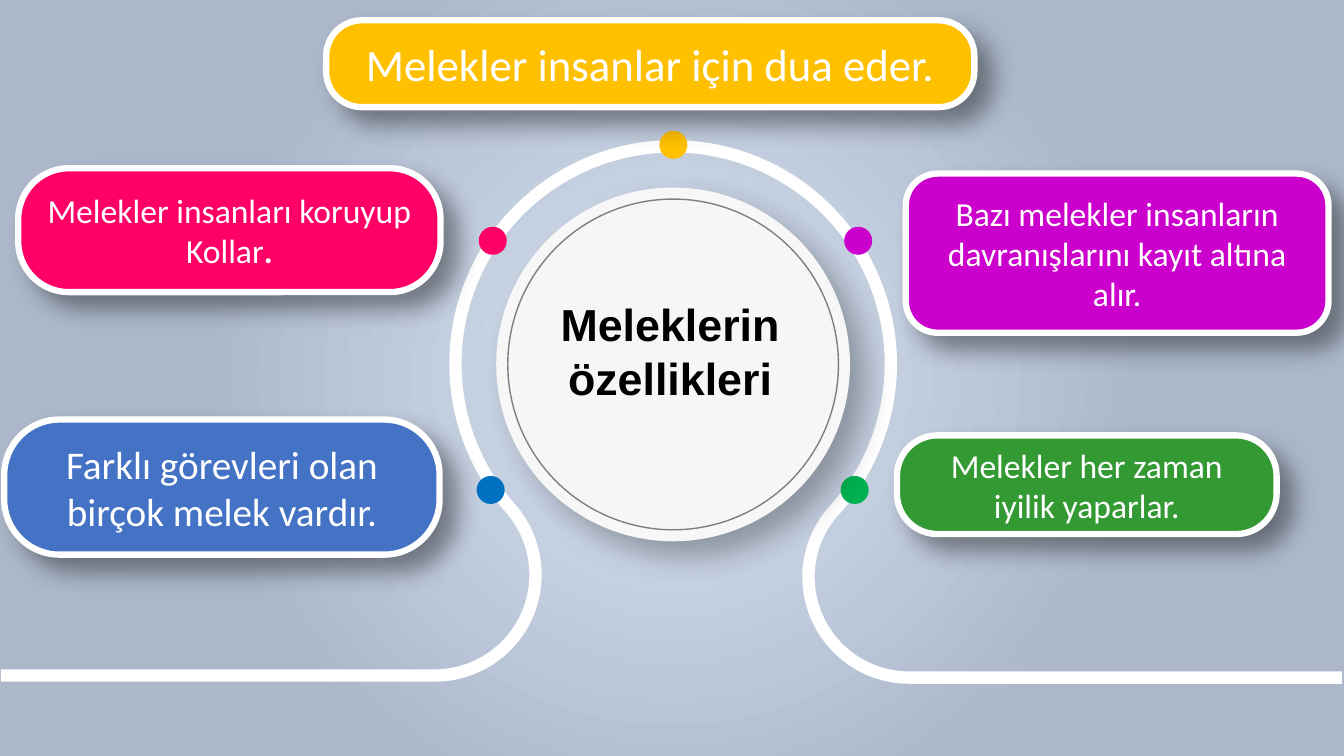
from math import atan2, cos, degrees, radians, sin, tan

from lxml import etree
from pptx import Presentation
from pptx.dml.color import RGBColor
from pptx.enum.shapes import MSO_SHAPE
from pptx.enum.text import MSO_ANCHOR, PP_ALIGN
from pptx.oxml import parse_xml
from pptx.oxml.ns import qn
from pptx.util import Pt

WHITE = "FFFFFF"
NS = "http://schemas.openxmlformats.org/drawingml/2006/main"


def paint(shape, fill, line=None, width=0, shadow=None):
    """Set fill, outline and shadow (opacity %, blur pt, distance pt)."""
    shape.fill.solid()
    shape.fill.fore_color.rgb = RGBColor.from_string(fill)
    if line:
        shape.line.color.rgb = RGBColor.from_string(line)
        shape.line.width = Pt(width)
    else:
        shape.line.fill.background()
    shape.shadow.inherit = False
    if shadow:
        opacity, blur, distance = shadow
        effects = shape._element.spPr.find(qn("a:effectLst"))
        outer = etree.SubElement(effects, qn("a:outerShdw"), blurRad=str(Pt(blur)),
                                 dist=str(Pt(distance)), dir="2700000",
                                 algn="tl", rotWithShape="0")
        color = etree.SubElement(outer, qn("a:srgbClr"), val="000000")
        etree.SubElement(color, qn("a:alpha"), val=str(opacity * 1000))


def arc_curves(center, radius, start, end, count):
    """Return three Bezier points for each of count equal parts of an arc."""
    step = radians(end - start) / count
    pull = 4 / 3 * tan(step / 4)
    points = []
    for i in range(count):
        a = radians(start) + i * step
        b = a + step
        for x, y in ((cos(a) - pull * sin(a), sin(a) + pull * cos(a)),
                     (cos(b) + pull * sin(b), sin(b) - pull * cos(b)),
                     (cos(b), sin(b))):
            points.append((center[0] + radius * x, center[1] + radius * y))
    return points


deck = Presentation()
deck.slide_width, deck.slide_height = Pt(960), Pt(540)
page = deck.slides.add_slide(deck.slide_layouts[6])

# Radial background
page.background.fill.solid()
properties = page.background._cSld.bg.bgPr
properties.replace(properties[0], parse_xml(
    f'<a:gradFill xmlns:a="{NS}" rotWithShape="1"><a:gsLst>'
    '<a:gs pos="0"><a:srgbClr val="D8E2F3"/></a:gs>'
    '<a:gs pos="62000"><a:srgbClr val="ACB8CA"/></a:gs>'
    '<a:gs pos="100000"><a:srgbClr val="ACB8CA"/></a:gs></a:gsLst>'
    '<a:path path="circle"><a:fillToRect l="50000" t="50000" r="50000" b="50000"/>'
    '</a:path></a:gradFill>'))

# White track: a ring that bends into two tangent loops and runs off both sides
ring, left_loop, right_loop = (480.8, 260), (310.5, 410.5), (649.5, 412)
ring_radius, loop_radius, half_width = 155.5, 72, 4.4
left_angle, right_angle = [degrees(atan2(y - ring[1], x - ring[0]))
                           for x, y in (left_loop, right_loop)]
edges = []
for side in (half_width, -half_width):
    bend = loop_radius - side
    edges.append([(0.7, left_loop[1] + bend), (left_loop[0], left_loop[1] + bend)]
                 + arc_curves(left_loop, bend, 90, left_angle - 180, 2)
                 + arc_curves(ring, ring_radius + side, left_angle, right_angle + 360, 4)
                 + arc_curves(right_loop, bend, right_angle + 180, 90, 2)
                 + [(958.5, right_loop[1] + bend)])
outline = [(Pt(x), Pt(y)) for x, y in edges[0] + edges[1][::-1]]
builder = page.shapes.build_freeform(*outline[0])
builder.add_line_segments(outline[1:])
track = builder.convert_to_shape()
paint(track, WHITE)

# Join each three points of the arcs into one curve
segments = list(track._element.iter(qn("a:lnTo")))
for first in [*range(1, 25, 3), *range(28, 52, 3)]:
    curve = etree.Element(qn("a:cubicBezTo"))
    segments[first].addprevious(curve)
    for segment in segments[first:first + 3]:
        curve.append(segment[0])
        segment.getparent().remove(segment)

# Dots on the ring, then the two discs in its middle
circles = [
    (350.5, 350, 20, "0070C0", {}),
    (352, 172, 20, "FF0066", {}),
    (481, 103.5, 20, "FFC000", {}),
    (610.5, 350, 20, "00B050", {}),
    (613, 172, 20, "CC00CC", {}),
    (480.8, 260.3, 252.7, "F6F7F6", {"shadow": (30, 22, 15)}),
    (480.8, 260.3, 236.2, "F6F6F6", {"line": "7F7F7F", "width": 1}),
]
for x, y, size, color, style in circles:
    circle = page.shapes.add_shape(MSO_SHAPE.OVAL, Pt(x - size / 2), Pt(y - size / 2),
                                   Pt(size), Pt(size))
    paint(circle, color, **style)

title = page.shapes.add_textbox(Pt(358.5), Pt(208.5), Pt(240.5), Pt(85))
title.text_frame.word_wrap = True
title.text_frame.text = "Meleklerin özellikleri"
para = title.text_frame.paragraphs[0]
para.alignment = PP_ALIGN.CENTER
font = para.runs[0].font
font.name, font.size, font.bold = "Arial", Pt(32), True
font.color.rgb = RGBColor.from_string("000000")

# Cards: left, top, width, height, corner, fill, text size, lines
cards = [
    (13, 120.2, 301.7, 88.5, 0.41, "FF0066", 24, ["Melekler insanları koruyup", "Kollar"]),
    (3, 299.7, 311, 96.5, 0.41, "4472C4", 28, ["Farklı görevleri olan birçok melek vardır."]),
    (233, 14.5, 463, 62, 0.41, "FFC000", 32, ["Melekler insanlar için dua eder."]),
    (647, 124, 302, 113.7, 0.2, "CC00CC", 24,
     ["Bazı melekler insanların davranışlarını kayıt altına alır."]),
    (640.7, 311, 271.2, 70.5, 0.41, "339933", 24, ["Melekler her zaman iyilik yaparlar."]),
]
for left, top, width, height, corner, color, size, lines in cards:
    card = page.shapes.add_shape(MSO_SHAPE.ROUNDED_RECTANGLE, Pt(left), Pt(top),
                                 Pt(width), Pt(height))
    card.adjustments[0] = corner
    paint(card, color, WHITE, 4.5, (40, 17, 14))
    frame = card.text_frame
    frame.word_wrap = True
    frame.vertical_anchor = MSO_ANCHOR.MIDDLE
    frame.text = "\n".join(lines)
    if lines[-1] == "Kollar":
        stop = frame.paragraphs[-1].add_run()
        stop.text = "."
        stop.font.bold = True
    for para in frame.paragraphs:
        para.alignment = PP_ALIGN.CENTER
        for span in para.runs:
            span.font.name, span.font.size = "Calibri", Pt(size)
            span.font.color.rgb = RGBColor.from_string(WHITE)

deck.save("out.pptx")
